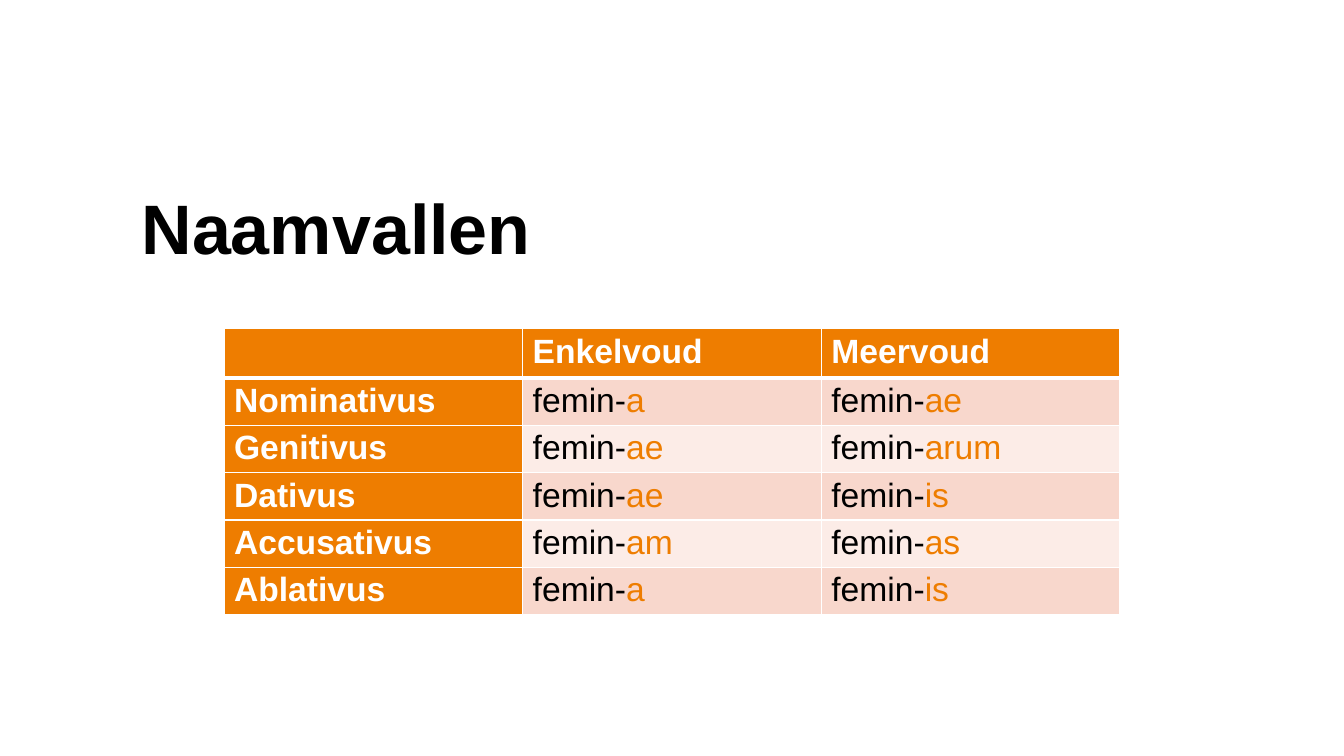
from dataclasses import dataclass
from lxml import etree
from pptx import Presentation
from pptx.dml.color import RGBColor
from pptx.enum.text import MSO_ANCHOR, MSO_AUTO_SIZE, PP_ALIGN
from pptx.oxml.ns import qn
from pptx.util import Inches, Pt

LEFT = PP_ALIGN.LEFT
TOP = MSO_ANCHOR.TOP
FIXED = MSO_AUTO_SIZE.NONE
TITLE_ONLY = 5


@dataclass(frozen=True)
class Theme:
    font: str = "Arial"
    title: int = 50
    body: int = 24
    black: str = "000000"
    white: str = "FFFFFF"
    accent: str = "EE7D00"
    bands: tuple = ("F8D7CC", "FCECE7")
    thin: int = 1
    thick: int = 3


THEME = Theme()
HEADS = ("", "Enkelvoud", "Meervoud")
STEM = "femin-"
CASES = (
    ("Nominativus", "a", "ae"),
    ("Genitivus", "ae", "arum"),
    ("Dativus", "ae", "is"),
    ("Accusativus", "am", "as"),
    ("Ablativus", "a", "is"),
)


def add_text(para, text, size=THEME.body, color=THEME.black, bold=False):
    run = para.add_run()
    run.text = text
    font = run.font
    font.name, font.size, font.bold = THEME.font, Pt(size), bold
    font.color.rgb = RGBColor.from_string(color)


def add_title(slide, text, left, top, width, height):
    title = slide.shapes.title
    title.left, title.top, title.width, title.height = left, top, width, height
    frame = title.text_frame
    frame.word_wrap, frame.auto_size = True, FIXED
    frame.vertical_anchor = TOP
    frame.margin_left = Inches(0.07)
    para = frame.paragraphs[0]
    para.alignment, para.line_spacing = LEFT, 0.9
    add_text(para, text, size=THEME.title, bold=True)


def set_edges(cell, **widths):
    """Draw white edges; widths maps L, R, T and B to points."""
    props = cell._tc.get_or_add_tcPr()
    for spot, (side, width) in enumerate(widths.items()):
        line = etree.Element(qn(f"a:ln{side}"), w=str(Pt(width)))
        fill = etree.SubElement(line, qn("a:solidFill"))
        etree.SubElement(fill, qn("a:srgbClr"), val=THEME.white)
        props.insert(spot, line)


def style_cell(cell, row, fill):
    cell.fill.solid()
    cell.fill.fore_color.rgb = RGBColor.from_string(fill)
    cell.margin_left = cell.margin_right = Inches(0.1)
    cell.margin_top = cell.margin_bottom = Inches(0.04)
    set_edges(
        cell, L=THEME.thin, R=THEME.thin,
        T=THEME.thick if row == 1 else THEME.thin,
        B=THEME.thick if row == 0 else THEME.thin,
    )


def add_cases(slide, left, top, width, height):
    rows = (HEADS,) + CASES
    table = slide.shapes.add_table(
        len(rows), len(HEADS), left, top, width, height
    ).table
    table.first_col = True
    for r, row in enumerate(rows):
        for c, text in enumerate(row):
            cell = table.cell(r, c)
            head = r == 0 or c == 0
            fill = THEME.accent if head else THEME.bands[(r - 1) % 2]
            style_cell(cell, r, fill)
            para = cell.text_frame.paragraphs[0]
            if not text:
                para.font.size = Pt(THEME.body)
            elif head:
                add_text(para, text, color=THEME.white, bold=True)
            else:
                add_text(para, STEM)
                add_text(para, text, color=THEME.accent)


def main():
    deck = Presentation()
    deck.slide_width, deck.slide_height = Inches(13.33), Inches(7.5)
    wide, high = deck.slide_width, deck.slide_height
    slide = deck.slides.add_slide(deck.slide_layouts[TITLE_ONLY])
    add_title(slide, "Naamvallen", int(wide / 10), int(high * 0.25),
              int(wide * 0.8), int(high * 0.13))
    add_cases(slide, int(wide / 6), int(high * 0.435),
              int(wide * 2 / 3), int(high * 0.376))
    deck.save("out.pptx")


if __name__ == "__main__":
    main()
